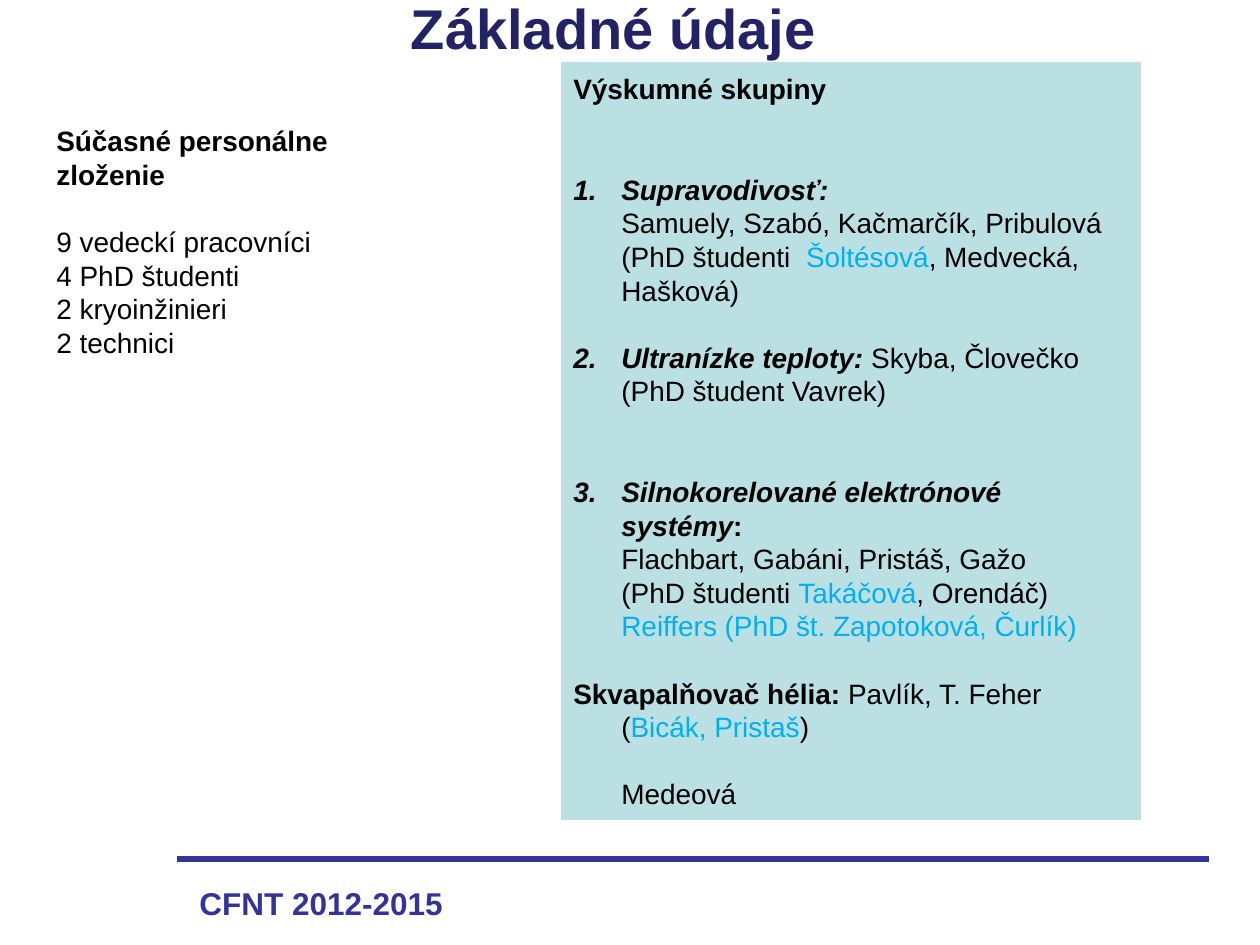
from lxml import etree
from pptx import Presentation
from pptx.dml.color import RGBColor
from pptx.enum.shapes import MSO_CONNECTOR, MSO_SHAPE
from pptx.enum.text import MSO_ANCHOR, PP_ALIGN
from pptx.oxml.ns import qn
from pptx.util import Emu, Pt

EMU_PER_PX = 914400 / 126
RECTANGLE = MSO_SHAPE.RECTANGLE
STRAIGHT = MSO_CONNECTOR.STRAIGHT
TOP, MIDDLE = MSO_ANCHOR.TOP, MSO_ANCHOR.MIDDLE
LEFT, CENTER = PP_ALIGN.LEFT, PP_ALIGN.CENTER

COLORS = {
    "title": "222267",
    "footer": "333399",
    "text": "000000",
    "highlight": "00B0F0",
    "panel": "BBE0E3",
}
FONT = "Arial"
BODY_SIZE = 16
BLANK_LINE = 19.2
LIST_INDENT = 48

BOLD = {"bold": True}
HEADING = {"bold": True, "italic": True}
HIGHLIGHT = {"color": "highlight"}


def px(length):
    return Emu(round(length * EMU_PER_PX))


def color(name):
    return RGBColor.from_string(COLORS[name])


def add_run(paragraph, text, size=BODY_SIZE, color_name="text", bold=False, italic=False):
    run = paragraph.add_run()
    run.text = text
    font = run.font
    font.name, font.size, font.bold, font.italic = FONT, Pt(size), bold, italic
    font.color.rgb = color(color_name)


def format_paragraph(paragraph, align=LEFT, gap=0, margin=0, hanging=0, number=None):
    """Set spacing in blank lines, indents in px and an optional list number."""
    paragraph.alignment = align
    if gap:
        paragraph.space_before = Pt(gap * BLANK_LINE)
    properties = paragraph._p.get_or_add_pPr()
    properties.set("marL", str(px(margin)))
    properties.set("indent", str(-px(hanging)))
    if number:
        bullet = etree.SubElement(properties, qn("a:buAutoNum"))
        bullet.set("type", "arabicPeriod")
        if number > 1:
            bullet.set("startAt", str(number))


def write_text(shape, paragraphs, anchor=TOP, wrap=True, size=BODY_SIZE):
    """Fill a shape from (paragraph format, [(text, run format), ...]) pairs."""
    frame = shape.text_frame
    frame.word_wrap = wrap
    frame.vertical_anchor = anchor
    for index, (layout, runs) in enumerate(paragraphs):
        paragraph = frame.add_paragraph() if index else frame.paragraphs[0]
        format_paragraph(paragraph, **layout)
        for text, style in runs:
            style = dict(style)
            color_name = style.pop("color", "text")
            add_run(paragraph, text, size=size, color_name=color_name, **style)


def add_text(slide, box, paragraphs, **options):
    write_text(slide.shapes.add_textbox(*map(px, box)), paragraphs, **options)


def add_title(slide, box):
    style = {"bold": True, "color": "title"}
    add_text(slide, box, [({"align": CENTER}, [("Základné údaje", style)])],
             anchor=MIDDLE, wrap=False, size=32)


def add_staff(slide, box):
    staff = ["9 vedeckí pracovníci", "4 PhD študenti", "2 kryoinžinieri", "2 technici"]
    paragraphs = [({}, [("Súčasné personálne zloženie", BOLD)])]
    paragraphs += [({"gap": int(index == 0)}, [(line, {})])
                   for index, line in enumerate(staff)]
    add_text(slide, box, paragraphs, anchor=MIDDLE)


def add_research_groups(slide, box):
    panel = slide.shapes.add_shape(RECTANGLE, *map(px, box))
    panel.shadow.inherit = False
    panel.fill.solid()
    panel.fill.fore_color.rgb = color("panel")
    panel.line.fill.background()

    member = {"margin": LIST_INDENT}
    hanging = {"margin": LIST_INDENT, "hanging": LIST_INDENT}
    write_text(panel, [
        ({}, [("Výskumné skupiny", BOLD)]),
        ({**hanging, "gap": 2, "number": 1}, [("Supravodivosť:", HEADING)]),
        (member, [("Samuely, Szabó, Kačmarčík, Pribulová", {})]),
        (member, [("(PhD študenti  ", {}), ("Šoltésová", HIGHLIGHT),
                  (", Medvecká, Hašková)", {})]),
        ({**hanging, "gap": 1, "number": 2},
         [("Ultranízke teploty: ", HEADING), ("Skyba, Človečko (PhD študent Vavrek)", {})]),
        ({**hanging, "gap": 2, "number": 3},
         [("Silnokorelované elektrónové systémy", HEADING), (":", BOLD)]),
        (member, [("Flachbart, Gabáni, Pristáš, Gažo", {})]),
        (member, [("(PhD študenti ", {}), ("Takáčová", HIGHLIGHT), (", Orendáč)", {})]),
        (member, [("Reiffers (PhD št. Zapotoková, Čurlík)", HIGHLIGHT)]),
        ({**hanging, "gap": 1},
         [("Skvapalňovač hélia: ", BOLD), ("Pavlík, T. Feher (", {}),
          ("Bicák, Pristaš", HIGHLIGHT), (")", {})]),
        ({**member, "gap": 1}, [("Medeová", {})]),
    ], anchor=MIDDLE)


def add_footer(slide, box):
    """Draw the rule along the top of the box and the label below it."""
    left, top, width, height = box
    rule = slide.shapes.add_connector(STRAIGHT, px(left), px(top), px(left + width), px(top))
    rule.line.color.rgb = color("footer")
    rule.line.width = Pt(3)
    etree.SubElement(rule._element.spPr, qn("a:effectLst"))
    style = {"bold": True, "color": "footer"}
    add_text(slide, (left + 10, top + 19, 271, height - 19),
             [({}, [("CFNT 2012-2015", style)])], wrap=False, size=18)


def main():
    presentation = Presentation()
    presentation.slide_width, presentation.slide_height = px(1260), px(945)
    slide = presentation.slides.add_slide(presentation.slide_layouts[6])
    add_footer(slide, (177, 859, 1032, 69))
    add_title(slide, (397, -13, 433, 81))
    add_staff(slide, (44, 116, 403, 251))
    add_research_groups(slide, (561, 62, 580, 758))
    presentation.save("out.pptx")


if __name__ == "__main__":
    main()
